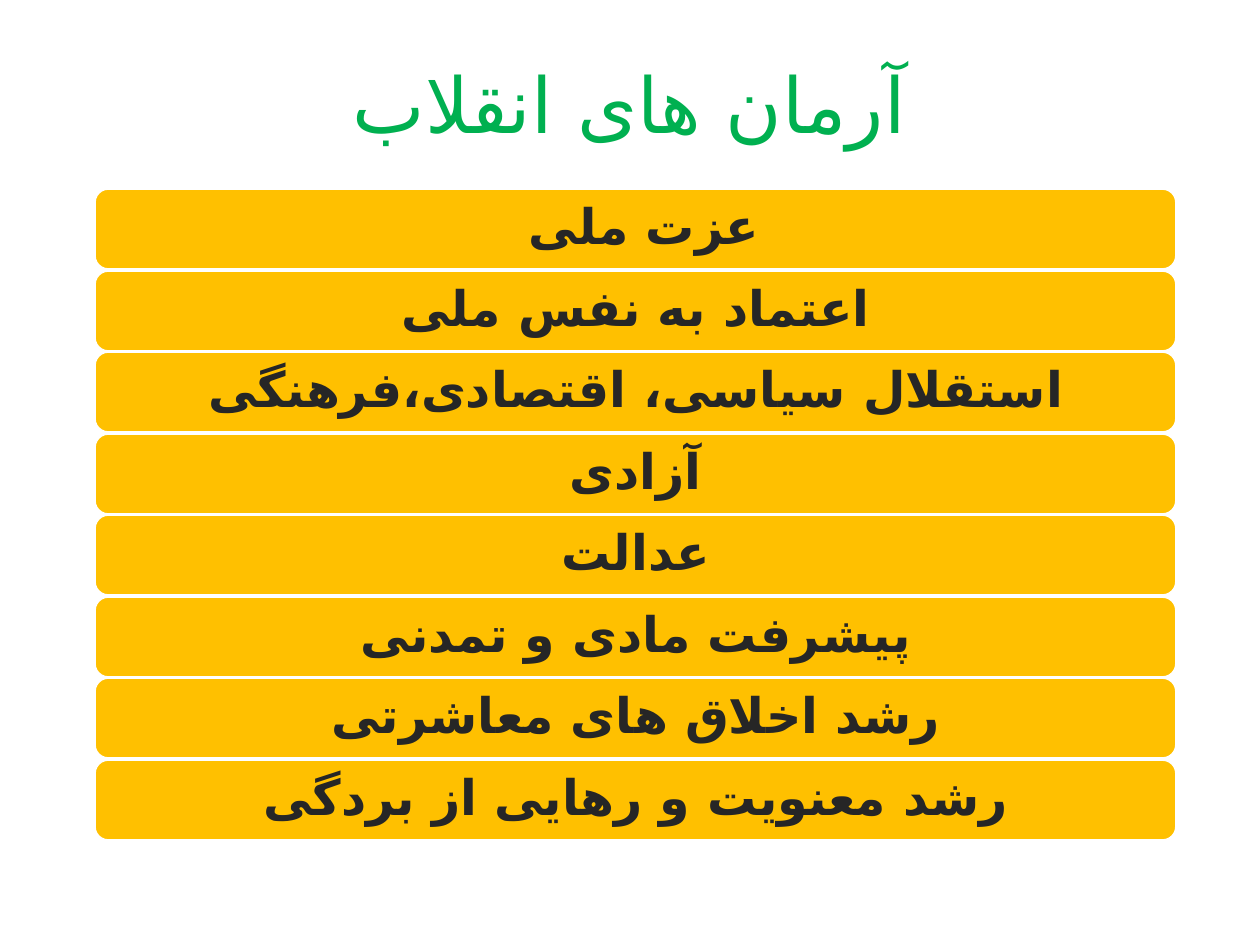
"""Builds a slide listing the ideals of the revolution as a stack of bars."""
from lxml import etree
from pptx import Presentation
from pptx import util as u
from pptx.dml.color import RGBColor
from pptx.enum import shapes, text
from pptx.oxml.ns import qn

FONT, ARABIC_FONT = "Roboto", "DejaVu Sans"
IDEALS = [
    "عزت ملی ",
    "اعتماد به نفس ملی",
    "استقلال سیاسی، اقتصادی،فرهنگی",
    "آزادی",
    "عدالت",
    "پیشرفت مادی و تمدنی",
    "رشد اخلاق های معاشرتی",
    "رشد معنویت و رهایی از بردگی",
]


def px(n):
    return u.Emu(round(n * 914400 / 126))


def write(sp, words, size, color, bold=False, inset=0):
    tf = sp.text_frame
    tf.word_wrap = True
    tf.vertical_anchor = text.MSO_ANCHOR.MIDDLE
    tf.margin_left = tf.margin_right = tf.margin_top = tf.margin_bottom = px(inset)
    p = tf.paragraphs[0]
    p.alignment = text.PP_ALIGN.CENTER
    p.line_spacing = 0.9
    p._p.get_or_add_pPr().set("rtl", "1")
    r = p.add_run()
    r.text = words
    r.font.size = u.Pt(size)
    r.font.bold = bold
    r.font.color.rgb = RGBColor.from_string(color)
    r.font.name = FONT
    etree.SubElement(r.font._element, qn("a:cs")).set("typeface", ARABIC_FONT)


prs = Presentation()
prs.slide_width, prs.slide_height = px(1260), px(945)
s = prs.slides.add_slide(prs.slide_layouts[6])

title = s.shapes.add_textbox(px(53), px(63), px(1153), px(91))
write(title, "آرمان های انقلاب", size=44, color="00B050")

left, top, width, height, last_top = 95, 189, 1081, 80, 760
step = (last_top - top) / (len(IDEALS) - 1)
for i, ideal in enumerate(IDEALS):
    sp = s.shapes.add_shape(
        shapes.MSO_SHAPE.ROUNDED_RECTANGLE,
        px(left), px(round(top + i * step)), px(width), px(height))
    sp.shadow.inherit = False
    sp.fill.solid()
    sp.fill.fore_color.rgb = RGBColor.from_string("FFC000")
    sp.line.color.rgb = RGBColor.from_string("FFFFFF")
    sp.line.width = u.Pt(1)
    write(sp, ideal, size=28, color="262626", bold=True, inset=15)

prs.save("out.pptx")
